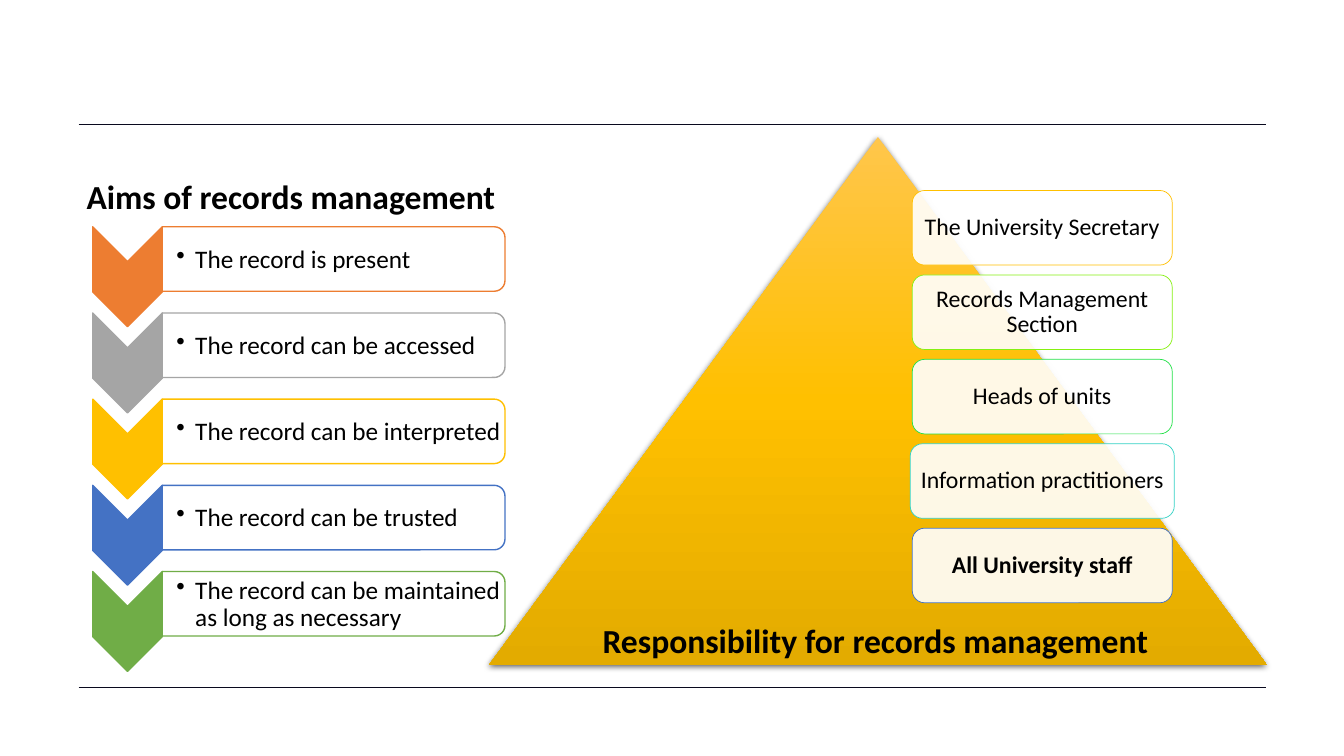
from copy import deepcopy

from lxml.etree import SubElement
from pptx import Presentation
from pptx.dml.color import RGBColor
from pptx.enum.shapes import MSO_CONNECTOR, MSO_SHAPE
from pptx.enum.text import MSO_ANCHOR, MSO_AUTO_SIZE, PP_ALIGN
from pptx.oxml.ns import qn
from pptx.util import Pt

BLACK = RGBColor(0x00, 0x00, 0x00)
WHITE = RGBColor(0xFF, 0xFF, 0xFF)
INK = RGBColor(0x09, 0x09, 0x1E)
ORANGE = RGBColor(0xED, 0x7D, 0x31)
GREY = RGBColor(0xA5, 0xA5, 0xA5)
GOLD = RGBColor(0xFF, 0xC0, 0x00)
BLUE = RGBColor(0x44, 0x72, 0xC4)
GREEN = RGBColor(0x70, 0xAD, 0x47)
LIME = RGBColor(0x86, 0xF0, 0x11)
MINT = RGBColor(0x23, 0xE1, 0x48)
TEAL = RGBColor(0x33, 0xD2, 0xC5)
PALE = RGBColor(0xFF, 0xC6, 0x4B)
DEEP = RGBColor(0xE3, 0xAB, 0x00)

AIMS = [
    ("The record is present", ORANGE),
    ("The record can be accessed", GREY),
    ("The record can be interpreted", GOLD),
    ("The record can be trusted", BLUE),
    ("The record can be maintained as long as necessary", GREEN),
]
ROLES = [
    ("The University Secretary", GOLD, 0, False),
    ("Records Management Section", LIME, 0, False),
    ("Heads of units", MINT, 0, False),
    ("Information practitioners", TEAL, 1.44, False),
    ("All University staff", BLUE, 0, True),
]


def write(shape, text, size=18, bold=False, align=PP_ALIGN.LEFT, inset=None,
          space=None, bullet=False, anchor=MSO_ANCHOR.MIDDLE):
    """Put one formatted paragraph into a shape."""
    frame = shape.text_frame
    frame.word_wrap = True
    frame.vertical_anchor = anchor
    if inset:
        (frame.margin_left, frame.margin_top,
         frame.margin_right, frame.margin_bottom) = map(Pt, inset)
    para = frame.paragraphs[0]
    para.text = text
    para.alignment = align
    if space:
        para.line_spacing = space
    if bullet:
        props = para._p.get_or_add_pPr()
        props.set("marL", str(Pt(13.5)))
        props.set("indent", str(-Pt(13.5)))
        SubElement(props, qn("a:buChar"), char="•")
    font = para.font
    font.name, font.size, font.bold = "Calibri", Pt(size), bold
    font.color.rgb = BLACK


class Page:
    """Hold the style and the current slide."""

    def __init__(self, slide):
        """Keep the slide to draw on."""
        self.shapes = slide.shapes

    def rule(self, left, right, top):
        """Draw a thin level line."""
        line = self.shapes.add_connector(
            MSO_CONNECTOR.STRAIGHT, Pt(left), Pt(top), Pt(right), Pt(top))
        line.line.color.rgb = INK
        line.line.width = Pt(0.5)
        SubElement(line._element.spPr, qn("a:effectLst"))

    def form(self, kind, box, fill, edge, width, alpha=None, turn=0):
        """Draw a filled and outlined preset shape."""
        shape = self.shapes.add_shape(kind, *map(Pt, box))
        shape.shadow.inherit = False
        shape.rotation = turn
        shape.fill.solid()
        shape.fill.fore_color.rgb = fill
        shape.line.color.rgb = edge
        shape.line.width = Pt(width)
        if alpha:
            tone = shape._element.spPr.find(qn("a:solidFill"))[0]
            SubElement(tone, qn("a:alpha"), val=str(alpha * 1000))
        return shape

    def peak(self, box, tones):
        """Draw the shaded triangle with its soft shadow."""
        shape = self.shapes.add_shape(MSO_SHAPE.ISOSCELES_TRIANGLE, *map(Pt, box))
        shape.fill.gradient()
        shape.fill.gradient_angle = 270
        stops = shape._element.spPr.find(qn("a:gradFill")).find(qn("a:gsLst"))
        stops.append(deepcopy(stops[-1]))
        for stop, tone, place in zip(shape.fill.gradient_stops, tones, (0, 0.5, 1)):
            stop.color.rgb = tone
            stop.position = place
        shape.line.fill.background()
        shape.shadow.inherit = False
        effects = shape._element.spPr.find(qn("a:effectLst"))
        shade = SubElement(effects, qn("a:outerShdw"), blurRad=str(Pt(4.5)),
                           dist=str(Pt(1.5)), dir="5400000", algn="ctr",
                           rotWithShape="0")
        tone = SubElement(shade, qn("a:srgbClr"), val=str(BLACK))
        SubElement(tone, qn("a:alpha"), val="63000")

    def label(self, box, text, **style):
        """Add a text box."""
        shape = self.shapes.add_textbox(*map(Pt, box))
        write(shape, text, **style)
        return shape

    def head(self, box, text):
        """Add a bold heading."""
        shape = self.label(box, text, size=24, bold=True, anchor=MSO_ANCHOR.TOP)
        shape.text_frame.auto_size = MSO_AUTO_SIZE.SHAPE_TO_FIT_TEXT

    def role(self, top, text, edge, grow, bold):
        """Add one level of responsibility."""
        box = (651.6 - grow, top, 185.76 + 2 * grow, 53.28)
        shape = self.form(MSO_SHAPE.ROUNDED_RECTANGLE, box, WHITE, edge, 0.5, 90)
        write(shape, text, size=17, bold=bold, align=PP_ALIGN.CENTER,
              inset=(4.9, 4.9, 4.9, 4.9), space=0.9)

    def aim(self, top, text, tone):
        """Add one chevron with its bar and bullet."""
        self.form(MSO_SHAPE.CHEVRON, (55.44, top + 10.2, 71.28, 49.68),
                  tone, tone, 1, turn=90)
        self.form(MSO_SHAPE.ROUND_2_SAME_RECTANGLE,
                  (215.28, top - 99.96, 46.08, 244.8), WHITE, tone, 1, 90, 90)
        self.label((115.92, top + 2.16, 242.64, 41.76), text, bullet=True,
                   inset=(10.08, 0.8, 0.8, 0.8), space=0.9)


def main():
    """Build and save the slide."""
    deck = Presentation()
    deck.slide_width, deck.slide_height = Pt(960), Pt(540)
    page = Page(deck.slides.add_slide(deck.slide_layouts[6]))
    for top in (88.56, 491.04):
        page.rule(56.16, 904.32, top)
    page.peak((349.2, 97.92, 555.84, 377.28), (PALE, GOLD, DEEP))
    for i, role in enumerate(ROLES):
        page.role(136.08 + 60.3 * i, *role)
    page.head((423.36, 439.2, 408.24, 36.72), "Responsibility for records management")
    for i, aim in enumerate(AIMS):
        page.aim(162.6 + 61.56 * i, *aim)
    page.head((54.72, 122.4, 323.28, 36), "Aims of records management")
    deck.save("out.pptx")


if __name__ == "__main__":
    main()
